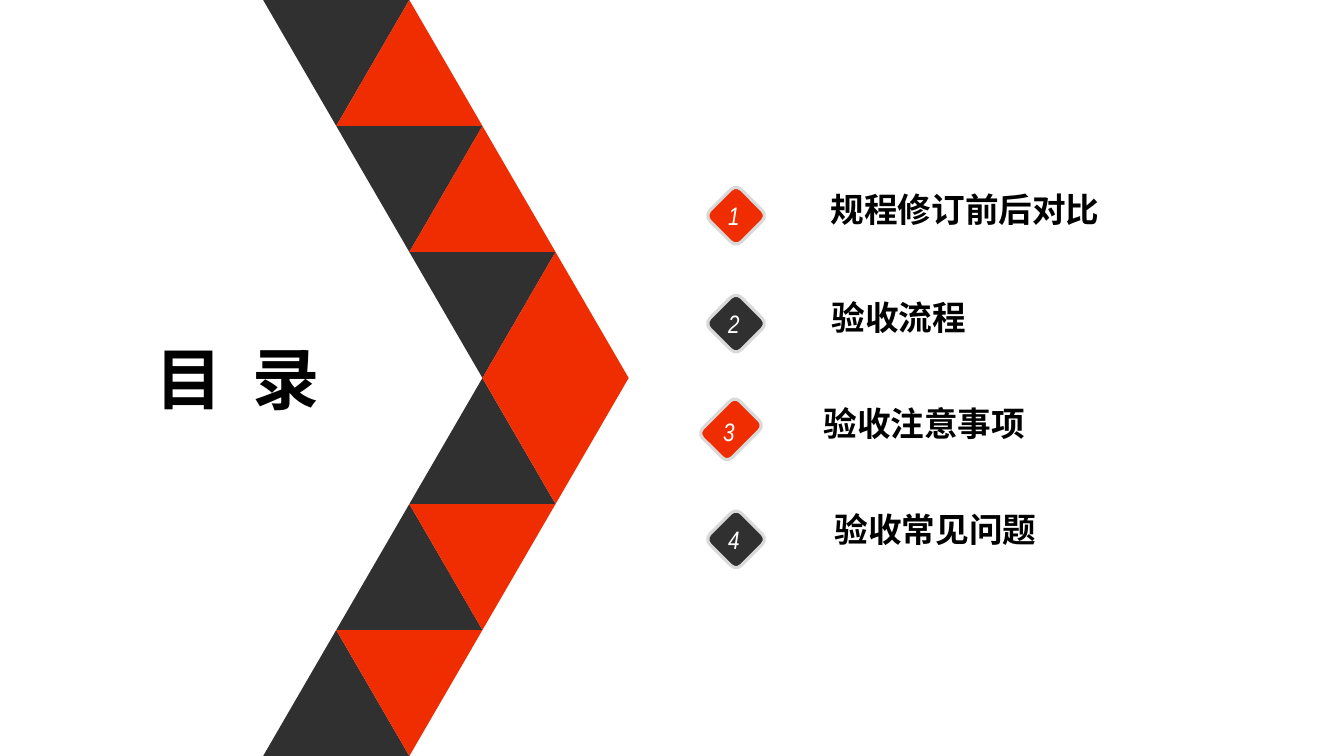
import pptx
import pptx.util
import pptx.dml.color
import pptx.enum.shapes
import pptx.enum.text
import pptx.oxml
import pptx.oxml.ns

WIDE, HIGH = 13.33, 7.5
ROWS = 6
ROW = HIGH / ROWS       # height of one triangle
HALF = 0.725            # half the base of one triangle
BAND = 2.61             # left edge of the chevron band
PITCH = 1.07            # distance between number badges
RED, DARK, GREY = "F02D01", "303030", "D9D9D9"
LATIN, HAN = "Arial Narrow", "Noto Sans CJK SC"
KINDS = pptx.enum.shapes.MSO_SHAPE
ALIGN = pptx.enum.text.PP_ALIGN

# text, text left, text top, badge centre x and y, badge size
ITEMS = [
    ("规程修订前后对比", 8.14, 1.83, 7.3, 2.14, (0.44, 0.44)),
    ("验收流程", 8.15, 2.9, 7.3, 3.21, (0.44, 0.44)),
    ("验收注意事项", 8.07, 3.95, 7.25, 4.26, (0.41, 0.52)),
    ("验收常见问题", 8.18, 5, 7.3, 5.35, (0.44, 0.44)),
]


def color(code):
    return pptx.dml.color.RGBColor.from_string(code)


def box(*sides):
    return [pptx.util.Inches(side) for side in sides]


def shape(slide, kind, place, fill, turn=0, edge=None):
    form = slide.shapes.add_shape(kind, *box(*place))
    form.shadow.inherit = False
    form.rotation = turn
    form.fill.solid()
    form.fill.fore_color.rgb = color(fill)
    if edge:
        form.line.color.rgb = color(edge)
        form.line.width = pptx.util.Pt(2.25)
    else:
        form.line.fill.background()


def write(slide, text, place, size=24, face=HAN, ink="000000", bold=False,
          slant=False, align=ALIGN.LEFT, wrap=True, space=0):
    """Add a text box; space is the extra letter spacing in points."""
    frame = slide.shapes.add_textbox(*box(*place)).text_frame
    frame.word_wrap = wrap
    frame.auto_size = pptx.enum.text.MSO_AUTO_SIZE.SHAPE_TO_FIT_TEXT
    line = frame.paragraphs[0]
    line.alignment = align
    run = line.add_run()
    run.text = text
    font = run.font
    font.size, font.name = pptx.util.Pt(size), face
    font.bold, font.italic = bold, slant
    font.color.rgb = color(ink)
    props = run._r.get_or_add_rPr()
    east = pptx.oxml.parse_xml(
        f'<a:ea {pptx.oxml.ns.nsdecls("a")} typeface="{HAN}"/>')
    props.append(east)
    if space:
        props.set("spc", str(round(space * 100)))


def band(slide):
    """Draw the chevron: a dark and a red triangle in each row, mirrored."""
    for row in range(ROWS):
        left = BAND + HALF * min(row, ROWS - 1 - row)
        upper = row < ROWS / 2
        for step, (fill, down) in enumerate([(DARK, upper), (RED, not upper)]):
            place = (left + step * HALF, row * ROW, 2 * HALF, ROW)
            shape(slide, KINDS.ISOSCELES_TRIANGLE, place, fill,
                  turn=180 if down else 0)


def badge(slide, num, x, y, size):
    wide, high = size
    shape(slide, KINDS.ROUNDED_RECTANGLE,
          (x - wide / 2, y - high / 2, wide, high),
          RED if num % 2 else DARK, turn=45, edge=GREY)
    mid = x - 0.02
    write(slide, str(num), (mid - 0.17, 2.14 + PITCH * (num - 1) - 0.2, 0.34, 0.4),
          size=18, face=LATIN, ink="FFFFFF", slant=True,
          align=ALIGN.CENTER, wrap=False)


def main():
    deck = pptx.Presentation()
    deck.slide_width, deck.slide_height = box(WIDE, HIGH)
    slide = deck.slides.add_slide(deck.slide_layouts[6])
    band(slide)
    write(slide, "目 录", (1.44, 3.3, 2.89, 0.91), size=48, face=LATIN,
          bold=True, space=5.5)
    for num, (text, left, top, x, y, size) in enumerate(ITEMS, 1):
        badge(slide, num, x, y, size)
        write(slide, text, (left, top, 2.87, 0.5), bold=True)
    deck.save("out.pptx")


if __name__ == "__main__":
    main()
